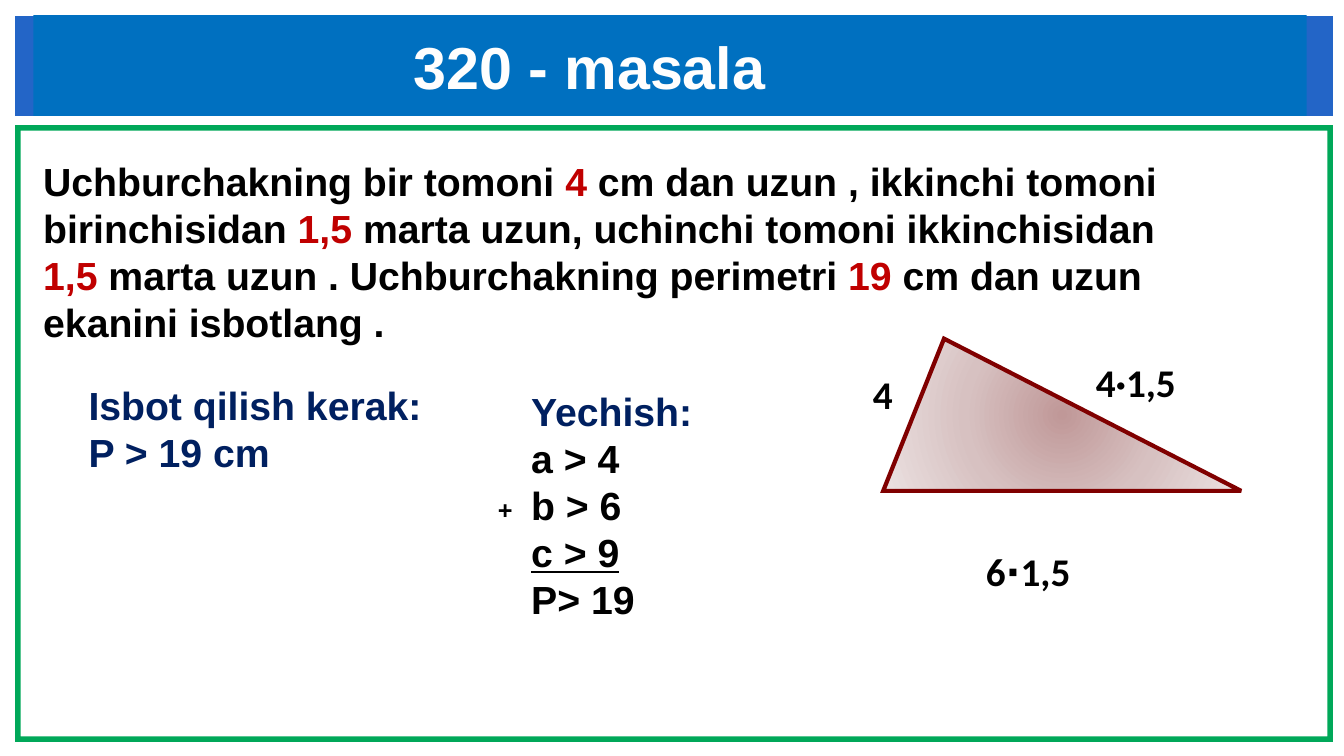
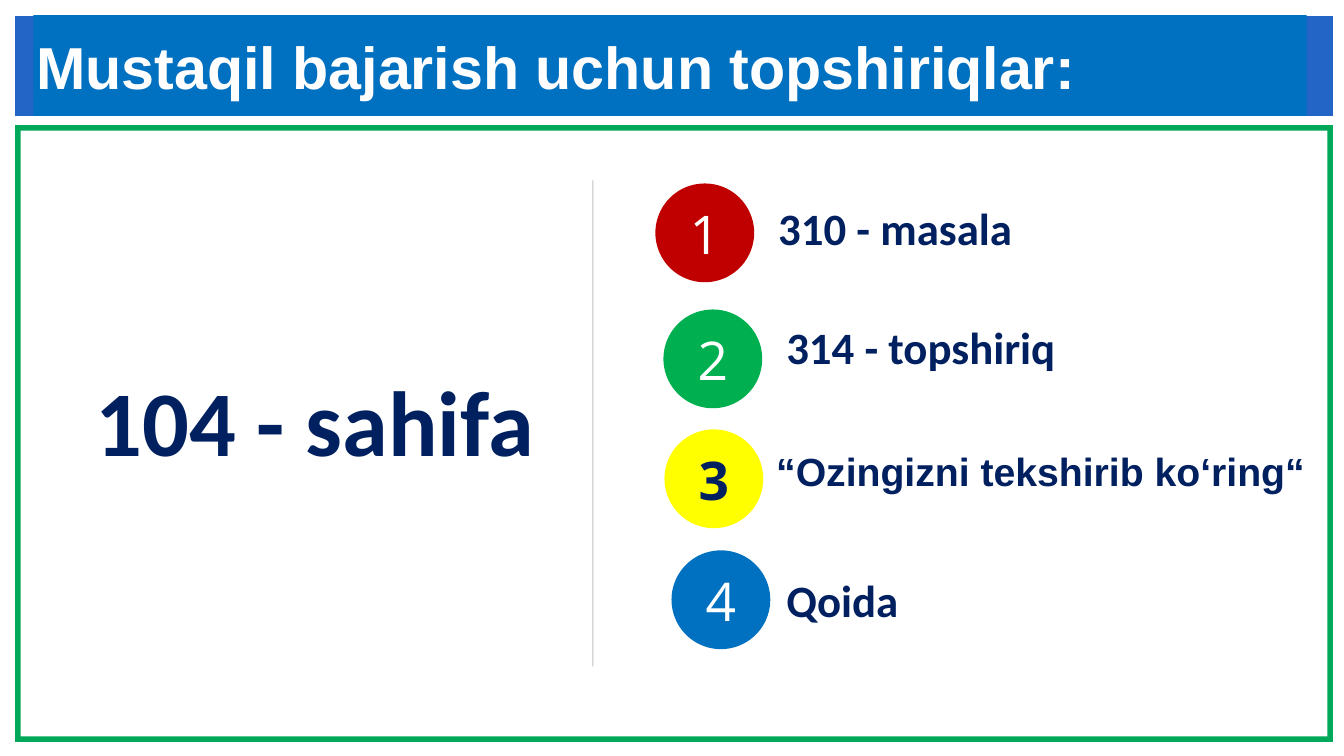
from lxml.etree import SubElement
from pptx import Presentation
from pptx.dml.color import RGBColor
from pptx.enum.shapes import MSO_CONNECTOR as LINE, MSO_SHAPE as SHAPE
from pptx.enum.text import MSO_ANCHOR as ANCHOR, PP_ALIGN as ALIGN
from pptx.oxml import parse_xml
from pptx.oxml.ns import nsdecls, qn
from pptx.util import Inches, Pt

NAVY, RED, GREEN, BLUE = "002060", "C00000", "00B050", "0070C0"
YELLOW, BLACK, WHITE = "FFFF00", "000000", "FFFFFF"
BAND, EDGE, TITLE, MAROON, GREY = "2365C7", "00A859", "FEFEFE", "800000", "7F7F7F"


def rgb(code):
    return RGBColor.from_string(code)


def inches(*sizes):
    return [Inches(size) for size in sizes]


def write(frame, lines, size=28, font="Arial", color=BLACK, bold=True,
          align=ALIGN.LEFT, before=0):
    """Fill a frame; each line is a string or a list of (text, format) runs."""
    for i, line in enumerate(lines):
        par = frame.paragraphs[0] if i == 0 else frame.add_paragraph()
        par.alignment, par.space_before = align, Pt(before)
        for text, look in [(line, {})] if isinstance(line, str) else line:
            run = par.add_run()
            run.text = text
            run.font.size, run.font.name = Pt(size), font
            run.font.bold = bold
            run.font.underline = look.get("under")
            run.font.color.rgb = rgb(look.get("color", color))


def label(slide, box, *lines, wrap=False, **look):
    frame = slide.shapes.add_textbox(*inches(*box)).text_frame
    frame.word_wrap = wrap
    write(frame, lines, **look)


def shape(slide, kind, box, fill):
    item = slide.shapes.add_shape(kind, *inches(*box))
    item.shadow.inherit = False
    item.fill.solid()
    item.fill.fore_color.rgb = rgb(fill)
    item.line.fill.background()
    return item


def page(deck, title, indent=0.03):
    """Add a slide with the border, the band and the title."""
    slide = deck.slides.add_slide(deck.slide_layouts[5])
    border = shape(slide, SHAPE.FRAME, (0.15, 1.24, 13.07, 6.12), EDGE)
    border.adjustments[0] = 0.009
    shape(slide, SHAPE.RECTANGLE, (0.15, 0.16, 13.07, 0.99), BAND)

    head = slide.shapes.title
    head.left, head.top, head.width, head.height = inches(0.33, 0.15, 12.63, 1)
    head.fill.solid()
    head.fill.fore_color.rgb = rgb(BLUE)
    frame = head.text_frame
    frame.vertical_anchor = ANCHOR.MIDDLE
    frame.margin_left = Inches(indent)
    frame.margin_top = frame.margin_right = frame.margin_bottom = 0
    write(frame, [title], size=42.3, color=TITLE, before=2.8)
    slide.shapes._spTree.append(head.element)
    return slide


def figure(slide, x, y):
    """Draw the triangle and the lengths of its sides."""
    item = shape(slide, SHAPE.ISOSCELES_TRIANGLE, (x, y, 3.55, 1.51), WHITE)
    item.adjustments[0] = 0.17
    item.line.color.rgb = rgb(MAROON)
    item.line.width = Pt(3)
    SubElement(item.line._get_or_add_ln(), qn("a:miter"), lim="800000")
    stops = "".join(
        f'<a:gs pos="{pos}000"><a:srgbClr val="{color}"/></a:gs>'
        for pos, color in ((0, "C09898"), (50, "D7C1C1"), (100, "EBE1E1")))
    shade = parse_xml(
        f'<a:gradFill {nsdecls("a")}><a:gsLst>{stops}</a:gsLst>'
        '<a:path path="circle"><a:fillToRect l="50000" t="50000" r="50000" '
        'b="50000"/></a:path></a:gradFill>')
    props = item.element.spPr
    props.replace(props.find(qn("a:solidFill")), shade)

    for dx, dy, text in ((-0.2, 0.26, "4"), (2.01, 0.15, "4·1,5"),
                         (0.92, 2.02, "6∙1,5")):
        label(slide, (x + dx, y + dy, 1.4, 0.57), text, wrap=True, font="Calibri")


def problem(deck):
    slide = page(deck, "320 - masala", indent=3.77)
    red = {"color": RED}
    label(slide, (0.33, 1.51, 12.18, 1.99),
          [("Uchburchakning bir tomoni ", {}), ("4 ", red),
           ("cm dan uzun , ikkinchi tomoni birinchisidan ", {}), ("1,5 ", red),
           ("marta uzun, uchinchi tomoni ikkinchisidan", {})],
          [("1,5 ", red), ("marta uzun . Uchburchakning perimetri ", {}),
           ("19 ", red), ("cm dan uzun ekanini isbotlang .", {})],
          wrap=True)
    label(slide, (0.78, 3.73, 3.55, 1.45),
          "Isbot qilish kerak:", "P > 19 cm", color=NAVY)
    label(slide, (5.17, 3.79, 1.82, 2.46),
          [("Yechish:", {"color": NAVY})], "a > 4", "b > 6",
          [("c > 9", {"under": True})], "P> 19")
    label(slide, (4.84, 4.86, 0.35, 0.4), "+", size=18)
    figure(slide, 8.76, 3.36)


def task(slide, num, spot, fill, ink, text, place, **look):
    """Draw a numbered disc at spot and its text at place."""
    disc = shape(slide, SHAPE.OVAL, (*spot, 0.98, 0.98), fill)
    frame = disc.text_frame
    frame.vertical_anchor = ANCHOR.MIDDLE
    frame.margin_left = frame.margin_right = 0
    frame.margin_top = frame.margin_bottom = 0
    write(frame, [str(num)], size=38.1, font="Open Sans", color=ink,
          bold=ink == NAVY, align=ALIGN.CENTER)
    label(slide, (*place, 5.49, 0.64), text, wrap=True, color=NAVY, **look)


def tasks(deck):
    slide = page(deck, "Mustaqil bajarish uchun topshiriqlar:")
    label(slide, (0.85, 3.56, 4.6, 1.21), "104 - sahifa",
          size=66, font="Calibri", color=NAVY)

    rule = slide.shapes.add_connector(LINE.STRAIGHT, *inches(5.88, 1.79, 5.88, 6.61))
    rule.line.color.rgb = rgb(GREY)
    rule.line.width = Pt(0.75)
    props = rule.element.spPr
    SubElement(props.find(".//" + qn("a:srgbClr")), qn("a:alpha"), val="50000")
    SubElement(props, qn("a:effectLst"))

    large = {"size": 32, "font": "Calibri"}
    rows = (
        ((6.5, 1.82), RED, WHITE, "310 - masala", (7.62, 1.94), large),
        ((6.58, 3.07), GREEN, WHITE, "314 - topshiriq", (7.7, 3.12), large),
        ((6.59, 4.26), YELLOW, NAVY, "“Ozingizni tekshirib ko‘ring“", (7.6, 4.39), {}),
        ((6.66, 5.46), BLUE, WHITE, "Qoida", (7.7, 5.63), large),
    )
    for num, (*parts, look) in enumerate(rows, 1):
        task(slide, num, *parts, **look)


def main():
    deck = Presentation()
    deck.slide_width, deck.slide_height = inches(13.33, 7.5)
    problem(deck)
    tasks(deck)
    deck.save("out.pptx")


if __name__ == "__main__":
    main()
